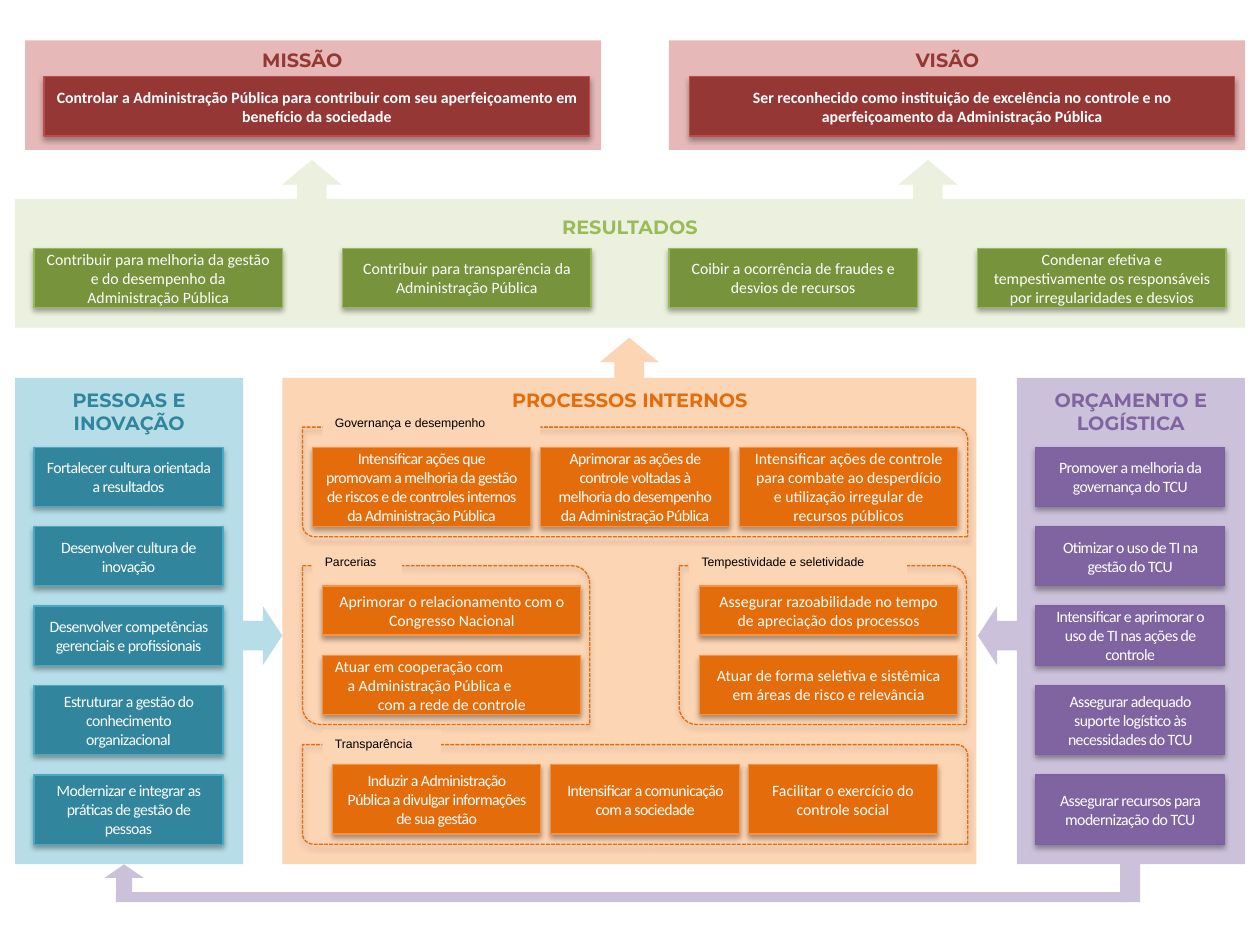
import pptx
import pptx.dml.color
import pptx.enum.dml
import pptx.enum.shapes
import pptx.enum.text
import pptx.oxml.ns
import pptx.util
from lxml import etree

Inches = pptx.util.Inches
Pt = pptx.util.Pt
RGBColor = pptx.dml.color.RGBColor
SHAPE = pptx.enum.shapes.MSO_SHAPE
ALIGN = pptx.enum.text.PP_ALIGN
ANCHOR = pptx.enum.text.MSO_ANCHOR
qn = pptx.oxml.ns.qn

WHITE = RGBColor(0xFF, 0xFF, 0xFF)
BLACK = RGBColor(0x00, 0x00, 0x00)
RED, RED_EDGE, RED_PALE = RGBColor(0x95, 0x37, 0x35), RGBColor(0xBF, 0x4C, 0x48), RGBColor(0xE6, 0xB9, 0xB8)
GREEN, GREEN_EDGE, GREEN_PALE = RGBColor(0x77, 0x93, 0x3C), RGBColor(0x98, 0xB9, 0x55), RGBColor(0xEB, 0xF1, 0xDE)
GREEN_TITLE = RGBColor(0x9B, 0xBB, 0x59)
ORANGE, ORANGE_EDGE, ORANGE_PALE = RGBColor(0xE4, 0x6C, 0x0A), RGBColor(0xF6, 0x92, 0x40), RGBColor(0xFC, 0xD5, 0xB5)
TEAL, TEAL_EDGE, TEAL_PALE = RGBColor(0x31, 0x85, 0x9C), RGBColor(0x46, 0xAA, 0xC5), RGBColor(0xB7, 0xDE, 0xE8)
PURPLE, PURPLE_EDGE, PURPLE_PALE = RGBColor(0x80, 0x64, 0xA2), RGBColor(0x7D, 0x60, 0xA0), RGBColor(0xCC, 0xC1, 0xDA)


class StrategyMap:
    """Holds the slide and the shared look of its elements."""

    title_font, card_font, label_font = "Montserrat", "Calibri", "Arial"

    def __init__(self, slide):
        self.slide = slide

    def block(self, x, y, w, h, fill=None, kind=SHAPE.RECTANGLE, rotation=0):
        shape = self.slide.shapes.add_shape(kind, Inches(x), Inches(y), Inches(w), Inches(h))
        shape.shadow.inherit = False
        shape.rotation = rotation
        shape.line.fill.background()
        if fill is None:
            shape.fill.background()
        else:
            shape.fill.solid()
            shape.fill.fore_color.rgb = fill
        return shape

    def arrow(self, x, y, w, h, fill, rotation=0):
        return self.block(x, y, w, h, fill, SHAPE.UP_ARROW, rotation)

    def edge(self, shape, color):
        """Thin outline with a soft shadow below."""
        shape.line.color.rgb = color
        shape.line.width = Pt(0.75)
        effects = shape._element.spPr.find(qn("a:effectLst"))
        shadow = etree.SubElement(effects, qn("a:outerShdw"), blurRad="40000", dist="23000",
                                  dir="5400000", rotWithShape="0")
        tint = etree.SubElement(shadow, qn("a:srgbClr"), val="000000")
        etree.SubElement(tint, qn("a:alpha"), val="35000")

    def set_text(self, shape, text, font, size, color, bold=False, align=ALIGN.CENTER, tight=False):
        frame = shape.text_frame
        frame.word_wrap = True
        frame.text = text
        for paragraph in frame.paragraphs:
            paragraph.alignment = align
            for run in paragraph.runs:
                run.font.name = font
                run.font.size = Pt(size)
                run.font.bold = bold
                run.font.color.rgb = color
                if tight:
                    run._r.get_or_add_rPr().set("spc", "-30")

    def title(self, x, y, w, h, text, color):
        box = self.slide.shapes.add_textbox(Inches(x), Inches(y), Inches(w), Inches(h))
        self.set_text(box, text, self.title_font, 11, color, bold=True)

    def card(self, x, y, w, h, text, fill, edge, bold=False, tight=False):
        card = self.block(x, y, w, h, fill)
        self.edge(card, edge)
        card.text_frame.vertical_anchor = ANCHOR.MIDDLE
        self.set_text(card, text, self.card_font, 9, WHITE, bold, tight=tight)
        return card

    def group_frame(self, x, y, w, h, label, label_x, label_y, label_w):
        """Dashed outline with a label that interrupts its top edge."""
        frame = self.block(x, y, w, h, kind=SHAPE.ROUND_2_DIAG_RECTANGLE, rotation=180)
        frame.adjustments[0], frame.adjustments[1] = 0, 0.11
        self.edge(frame, ORANGE)
        frame.line.dash_style = pptx.enum.dml.MSO_LINE.SQUARE_DOT
        tag = self.block(label_x, label_y, label_w, 0.22, ORANGE_PALE)
        tag.text_frame.vertical_anchor = ANCHOR.TOP
        self.set_text(tag, label, self.label_font, 7, BLACK, align=ALIGN.LEFT)

    def side_column(self, x, title, texts, fill, edge, pale):
        self.block(x, 3, 1.81, 3.86, pale)
        self.title(x, 3.03, 1.81, 0.47, title, fill)
        y = 3.55
        for text, height in zip(texts, (0.47, 0.47, 0.47, 0.55, 0.55)):
            self.card(x + 0.15, y, 1.5, height, text, fill, edge, tight=True)
            y += height + 0.16


def main():
    deck = pptx.Presentation()
    deck.slide_width, deck.slide_height = Inches(10), Inches(7.5)
    plan = StrategyMap(deck.slides.add_slide(deck.slide_layouts[6]))

    # Mission and vision
    for x, card_x, title_x, title, text in (
        (0.2, 0.35, 1.3, "MISSÃO",
         "Controlar a Administração Pública para contribuir com seu aperfeiçoamento em benefício da sociedade"),
        (5.31, 5.47, 6.42, "VISÃO",
         "Ser reconhecido como instituição de excelência no controle e no aperfeiçoamento da Administração Pública"),
    ):
        plan.block(x, 0.32, 4.57, 0.87, RED_PALE)
        plan.card(card_x, 0.61, 4.33, 0.47, text, RED, RED_EDGE, bold=True)
        plan.title(title_x, 0.33, 2.2, 0.29, title, RED)

    # Results
    plan.block(0.12, 1.58, 9.76, 1.02, GREEN_PALE)
    plan.title(3.9, 1.66, 2.2, 0.28, "RESULTADOS", GREEN_TITLE)
    for x, text in (
        (0.27, "Contribuir para melhoria da gestão e do desempenho da Administração Pública"),
        (2.72, "Contribuir para transparência da Administração Pública"),
        (5.31, "Coibir a ocorrência de fraudes e desvios de recursos"),
        (7.76, "Condenar efetiva e tempestivamente os responsáveis por irregularidades e desvios"),
    ):
        plan.card(x, 1.97, 1.97, 0.47, text, GREEN, GREEN_EDGE)
    for x in (2.24, 7.13):
        plan.arrow(x, 1.27, 0.47, 0.39, GREEN_PALE)

    # Internal processes
    plan.block(2.24, 3, 5.51, 3.86, ORANGE_PALE)
    plan.arrow(4.76, 2.68, 0.47, 0.39, ORANGE_PALE)
    plan.title(3.9, 3.03, 2.2, 0.29, "PROCESSOS INTERNOS", ORANGE)
    for x, y, w, h, tight, text in (
        (2.48, 3.55, 1.73, 0.63, True, "Intensificar ações que promovam a melhoria da gestão de riscos e de "
                                       "controles internos da Administração Pública"),
        (4.29, 3.55, 1.5, 0.63, True, "Aprimorar as ações de controle voltadas à melhoria do desempenho "
                                      "da Administração Pública"),
        (5.87, 3.55, 1.73, 0.63, False, "Intensificar ações de controle para combate ao desperdício e "
                                        "utilização irregular de recursos públicos"),
        (2.56, 4.65, 2.05, 0.39, False, "Aprimorar o relacionamento com o Congresso Nacional"),
        (5.55, 4.65, 2.05, 0.39, False, "Assegurar razoabilidade no tempo de apreciação dos processos"),
        (5.55, 5.2, 2.05, 0.47, False, "Atuar de forma seletiva e sistêmica em áreas de risco e relevância"),
        (2.64, 6.07, 1.65, 0.55, True, "Induzir a Administração Pública a divulgar informações de sua gestão"),
        (4.37, 6.07, 1.5, 0.55, True, "Intensificar a comunicação com a sociedade"),
        (5.94, 6.07, 1.5, 0.55, False, "Facilitar o exercício do controle social"),
    ):
        plan.card(x, y, w, h, text, ORANGE, ORANGE_EDGE, tight=tight)

    # Cooperation card, with its lines stepped to the right
    cooperation = plan.card(2.56, 5.2, 2.05, 0.47, "Atuar em cooperação com\na Administração Pública e\n"
                            "com a rede de controle", ORANGE, ORANGE_EDGE)
    for line, indent in zip(cooperation.text_frame.paragraphs, (0, 0.1, 0.34)):
        line.alignment = ALIGN.LEFT
        line._p.get_or_add_pPr().set("marL", str(Inches(indent)))

    # Dashed groups inside the processes
    plan.group_frame(2.4, 3.39, 5.28, 0.87, "Governança e desempenho", 2.56, 3.25, 1.73)
    plan.group_frame(2.4, 4.49, 2.28, 1.26, "Parcerias", 2.48, 4.35, 0.71)
    plan.group_frame(5.39, 4.49, 2.28, 1.26, "Tempestividade e seletividade", 5.47, 4.35, 1.73)
    plan.group_frame(2.4, 5.91, 5.28, 0.79, "Transparência", 2.56, 5.79, 0.94)

    # Side columns and their arrows to the centre
    plan.side_column(0.12, "PESSOAS E\nINOVAÇÃO", (
        "Fortalecer cultura orientada a resultados",
        "Desenvolver cultura de inovação",
        "Desenvolver competências gerenciais e profissionais",
        "Estruturar a gestão do conhecimento organizacional",
        "Modernizar e integrar as práticas de gestão de pessoas",
    ), TEAL, TEAL_EDGE, TEAL_PALE)
    plan.side_column(8.07, "ORÇAMENTO E\nLOGÍSTICA", (
        "Promover a melhoria da governança do TCU",
        "Otimizar o uso de TI na gestão do TCU",
        "Intensificar e aprimorar o uso de TI nas ações de controle",
        "Assegurar adequado suporte logístico às necessidades do TCU",
        "Assegurar recursos para modernização do TCU",
    ), PURPLE, PURPLE_EDGE, PURPLE_PALE)
    plan.arrow(1.85, 4.89, 0.47, 0.31, TEAL_PALE, 90)
    plan.arrow(7.68, 4.89, 0.47, 0.31, PURPLE_PALE, 270)

    # Return path from budget to people
    return_head = plan.arrow(0.83, 6.86, 0.31, 0.27, PURPLE_PALE)
    return_head.adjustments[0], return_head.adjustments[1] = 0.41, 0.4
    plan.block(0.92, 7.08, 8.02, 0.08, PURPLE_PALE)
    plan.block(8.89, 6.84, 0.16, 0.32, PURPLE_PALE)

    deck.save("out.pptx")


if __name__ == "__main__":
    main()
